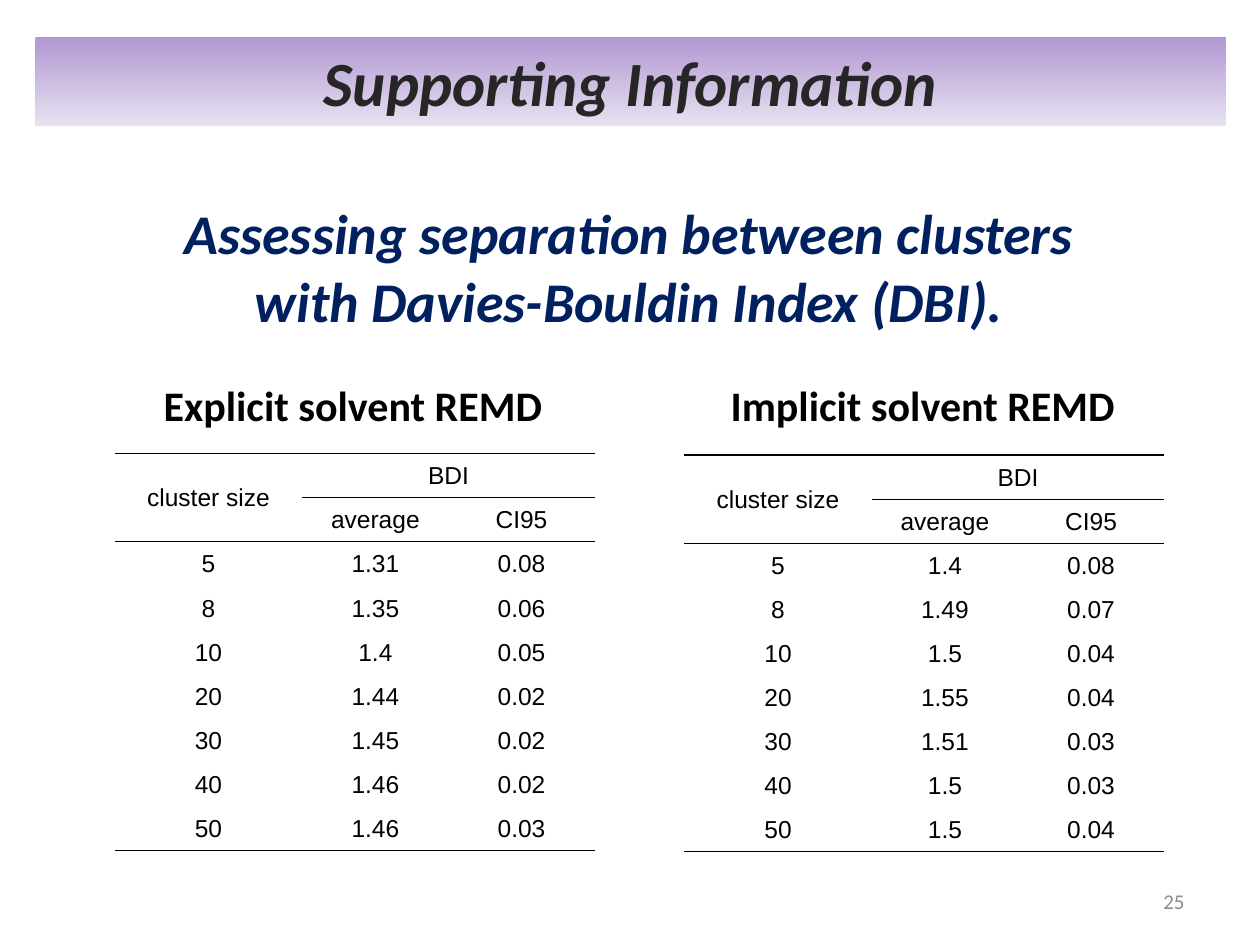
from dataclasses import dataclass

from lxml.etree import SubElement
from pptx import Presentation
from pptx.dml.color import RGBColor
from pptx.enum.shapes import MSO_SHAPE as Shape
from pptx.enum.text import MSO_ANCHOR as Anchor, PP_ALIGN as Align
from pptx.oxml.ns import qn
from pptx.util import Pt

PX = 9144
SIZES = (5, 8, 10, 20, 30, 40, 50)
RULES = {1: 1, 2: 0.5, 3: 0.5, 10: 1}


@dataclass
class Box:
    left: int
    top: int
    width: int
    height: int

    def emu(self) -> tuple:
        return tuple(v * PX for v in (self.left, self.top, self.width, self.height))


@dataclass
class Style:
    size: int
    color: str
    face: str = "Calibri"
    bold: bool = False
    slant: bool = False
    align: Align = Align.CENTER


@dataclass
class Label:
    text: str
    box: Box
    style: Style
    wrap: bool = True
    anchor: Anchor = Anchor.TOP


@dataclass
class Grid:
    box: Box
    means: tuple
    spreads: tuple
    foot: tuple = ()


def rgb(code: str) -> RGBColor:
    return RGBColor.from_string(code)


def write(frame, text: str, style: Style) -> None:
    para = frame.paragraphs[0]
    para.text = text
    para.alignment = style.align
    font = para.font
    font.size, font.name = Pt(style.size), style.face
    font.bold, font.italic = style.bold, style.slant
    font.color.rgb = rgb(style.color)


def draw_label(slide, label: Label) -> None:
    frame = slide.shapes.add_textbox(*label.box.emu()).text_frame
    frame.word_wrap = label.wrap
    frame.vertical_anchor = label.anchor
    write(frame, label.text, label.style)


def draw_banner(slide, text: str, box: Box, style: Style) -> None:
    bar = slide.shapes.add_shape(Shape.RECTANGLE, *box.emu())
    bar.shadow.inherit = False
    bar.line.fill.background()
    bar.fill.gradient()
    bar.fill.gradient_angle = 270
    for stop, code in zip(bar.fill.gradient_stops, ("B197D2", "E7E1F0")):
        stop.color.rgb = rgb(code)
    bar.text_frame.word_wrap = True
    write(bar.text_frame, text, style)


def set_edge(cell, side: str, width: float) -> None:
    line = SubElement(cell._tc.get_or_add_tcPr(), qn(f"a:ln{side}"))
    if width:
        line.set("w", str(Pt(width)))
        fill = SubElement(line, qn("a:solidFill"))
        SubElement(fill, qn("a:srgbClr")).set("val", "000000")
    else:
        SubElement(line, qn("a:noFill"))


def draw_grid(slide, grid: Grid, style: Style) -> None:
    body = [tuple(map(str, row)) for row in zip(SIZES, grid.means, grid.spreads)]
    rows = [("",) * 3, ("cluster size", "BDI", ""), ("", "average", "CI95"), *body]
    rows += [("",) * 3] * len(grid.foot)
    heights = (27,) + (35,) * 9 + grid.foot
    table = slide.shapes.add_table(len(rows), 3, *grid.box.emu()).table
    table.first_row = table.horz_banding = False
    for col, width in zip(table.columns, (149, 116, 116)):
        col.width = width * PX
    for row, height in zip(table.rows, heights):
        row.height = height * PX
    table.cell(1, 0).merge(table.cell(2, 0))
    table.cell(1, 1).merge(table.cell(1, 2))
    for r, row in enumerate(rows):
        for c, text in enumerate(row):
            cell = table.cell(r, c)
            cell.margin_left = cell.margin_right = cell.margin_top = PX
            cell.margin_bottom = 0
            cell.vertical_anchor = Anchor.MIDDLE
            write(cell.text_frame, text, style)
            inner = (r, c) == (2, 0)
            edges = {"L": 0, "R": 0, "T": 0 if inner else RULES.get(r, 0),
                     "B": RULES.get(r + 1, 0)}
            for side, width in edges.items():
                set_edge(cell, side, width)
            cell.fill.background()


def main() -> None:
    deck = Presentation()
    deck.slide_width, deck.slide_height = 1000 * PX, 750 * PX
    slide = deck.slides.add_slide(deck.slide_layouts[6])
    draw_banner(slide, "Supporting Information", Box(28, 29, 945, 71),
                Style(36, "262626", bold=True, slant=True))
    cell = Style(14, "000000", "Arial")
    grids = (
        Grid(Box(91, 333, 381, 368), (1.31, 1.35, 1.4, 1.44, 1.45, 1.46, 1.46),
             (0.08, 0.06, 0.05, 0.02, 0.02, 0.02, 0.03), (26,)),
        Grid(Box(543, 334, 381, 342), (1.4, 1.49, 1.5, 1.55, 1.51, 1.5, 1.5),
             (0.08, 0.07, 0.04, 0.04, 0.03, 0.03, 0.04)),
    )
    for grid in grids:
        draw_grid(slide, grid, cell)
    head = Style(24, "000000", bold=True, align=Align.LEFT)
    labels = (
        Label("Explicit solvent REMD", Box(120, 296, 324, 50), head, wrap=False),
        Label("Implicit solvent REMD", Box(570, 296, 328, 50), head, wrap=False),
        Label("Assessing separation between clusters with Davies-Bouldin Index (DBI).",
              Box(106, 153, 787, 118), Style(32, "002060", bold=True, slant=True)),
        Label("25", Box(717, 695, 233, 40), Style(12, "8C8C8C", align=Align.RIGHT),
              anchor=Anchor.MIDDLE),
    )
    for label in labels:
        draw_label(slide, label)
    deck.save("out.pptx")


if __name__ == "__main__":
    main()
